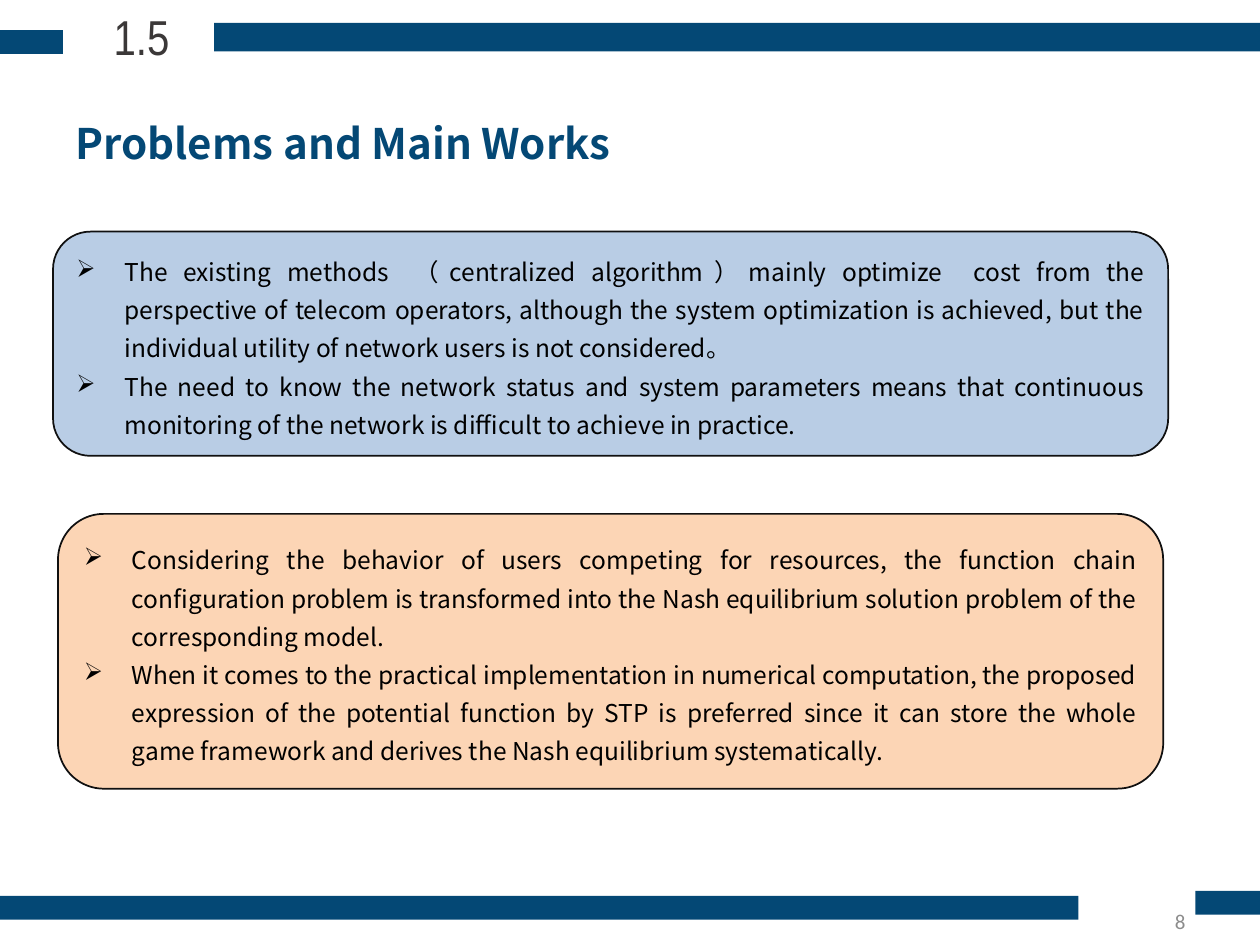
from dataclasses import dataclass

from lxml import etree
from pptx import Presentation, util as u
from pptx.dml.color import RGBColor
from pptx.enum import shapes, text
from pptx.oxml.ns import qn


@dataclass(frozen=True)
class Theme:
    navy: str = "044875"
    blue: str = "B9CDE5"
    peach: str = "FCD5B5"
    outline: str = "101010"
    ink: str = "000000"
    charcoal: str = "3B3838"
    gray: str = "8C8C8C"
    body_font: str = "Noto Sans CJK SC"
    section_font: str = "Arial Narrow"
    number_font: str = "Calibri"
    heading_size: int = 24
    section_size: int = 28
    body_size: int = 14
    number_size: int = 12


def write(frame, paragraphs, *, font, size, color, bold=False, align=text.PP_ALIGN.LEFT,
          anchor=text.MSO_ANCHOR.TOP, spacing=None, bullet=None, indent=0, wrap=True):
    """Fill a text frame with uniformly formatted paragraphs."""
    frame.text = "\n".join(paragraphs)
    frame.word_wrap = wrap
    frame.auto_size = text.MSO_AUTO_SIZE.NONE
    frame.vertical_anchor = anchor
    for paragraph in frame.paragraphs:
        paragraph.alignment = align
        paragraph.line_spacing = spacing
        run = paragraph.runs[0]
        run.font.name, run.font.size, run.font.bold = font, u.Pt(size), bold
        run.font.color.rgb = RGBColor.from_string(color)
        etree.SubElement(run.font._element, qn("a:ea"), typeface=font)
        if bullet:
            properties = paragraph._p.get_or_add_pPr()
            properties.set("marL", str(u.Cm(indent)))
            properties.set("indent", str(-u.Cm(indent)))
            etree.SubElement(properties, qn("a:buChar"), char=bullet)


class Deck:
    """Hold the theme and the current slide, and add its elements."""

    def __init__(self, theme):
        self.theme = theme
        self.presentation = Presentation()
        self.presentation.slide_width = u.Cm(25.4)
        self.presentation.slide_height = u.Cm(19.05)
        self.slide = self.presentation.slides.add_slide(self.presentation.slide_layouts[5])

    def title(self, wording, box):
        """Move and format the title placeholder."""
        heading = self.slide.shapes.title
        heading.left, heading.top, heading.width, heading.height = map(u.Cm, box)
        write(heading.text_frame, [wording], font=self.theme.body_font,
              size=self.theme.heading_size, color=self.theme.navy, bold=True,
              spacing=u.Pt(16.5))

    def label(self, wording, box, **style):
        """Add a short text box."""
        label = self.slide.shapes.add_textbox(*map(u.Cm, box))
        write(label.text_frame, [wording], **style)

    def block(self, kind, box, fill):
        """Add a flat filled shape without an outline."""
        block = self.slide.shapes.add_shape(kind, *map(u.Cm, box))
        block.shadow.inherit = False
        block.fill.solid()
        block.fill.fore_color.rgb = RGBColor.from_string(fill)
        block.line.fill.background()
        return block

    def bar(self, box):
        """Add a navy decoration bar."""
        self.block(shapes.MSO_SHAPE.RECTANGLE, box, self.theme.navy)

    def panel(self, points, box, fill):
        """Add an outlined panel of bulleted points."""
        panel = self.block(shapes.MSO_SHAPE.FLOWCHART_ALTERNATE_PROCESS, box, fill)
        panel.line.color.rgb = RGBColor.from_string(self.theme.outline)
        panel.line.width = u.Pt(1)
        write(panel.text_frame, points, font=self.theme.body_font,
              size=self.theme.body_size, color=self.theme.ink,
              align=text.PP_ALIGN.JUSTIFY, anchor=text.MSO_ANCHOR.MIDDLE,
              spacing=1.3, bullet="➢", indent=0.97)


PROBLEMS = [
    "The existing methods （centralized algorithm）mainly optimize  cost from the "
    "perspective of telecom operators, although the system optimization is achieved, "
    "but the individual utility of network users is not considered。",
    "The need to know the network status and system parameters means that continuous "
    "monitoring of the network is difficult to achieve in practice.",
]
MAIN_WORKS = [
    "Considering the behavior of users competing for resources, the function chain "
    "configuration problem is transformed into the Nash equilibrium solution problem "
    "of the corresponding model.",
    "When it comes to the practical implementation in numerical computation, the "
    "proposed expression of the potential function by STP is preferred since it can "
    "store the whole game framework and derives the Nash equilibrium systematically.",
]
BARS = [
    (0, 0.61, 1.27, 0.48),
    (4.32, 0.46, 21.08, 0.58),
    (24.1, 17.96, 1.3, 0.48),
    (0, 18.06, 21.74, 0.48),
]


def main():
    theme = Theme()
    deck = Deck(theme)
    for bar in BARS:
        deck.bar(bar)
    deck.label("1.5", (2.03, 0, 1.65, 1.45), font=theme.section_font,
               size=theme.section_size, color=theme.charcoal,
               align=text.PP_ALIGN.CENTER, wrap=False)
    deck.label("8", (18.59, 18.08, 5.56, 0.97), font=theme.number_font,
               size=theme.number_size, color=theme.gray,
               align=text.PP_ALIGN.RIGHT, anchor=text.MSO_ANCHOR.MIDDLE)
    deck.panel(PROBLEMS, (1.07, 4.67, 22.48, 4.52), theme.blue)
    deck.panel(MAIN_WORKS, (1.17, 10.36, 22.28, 5.54), theme.peach)
    deck.title("Problems and Main Works", (1.27, 2.67, 13.92, 0.91))
    deck.presentation.save("out.pptx")


if __name__ == "__main__":
    main()
